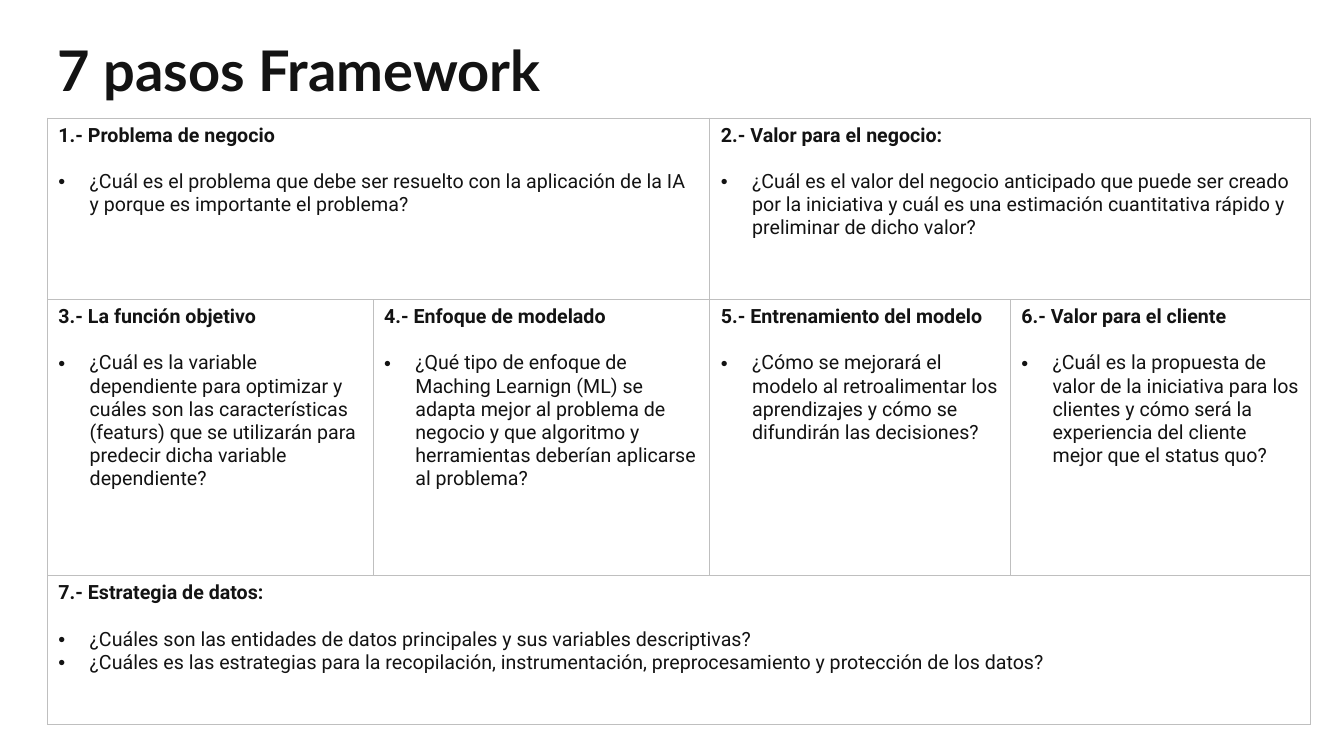
from dataclasses import dataclass

from lxml import etree
from pptx import Presentation, util as u
from pptx.dml.color import RGBColor
from pptx.enum import text
from pptx.oxml import ns


@dataclass(frozen=True)
class Theme:
    ink: str = "131313"
    paper: str = "FFFFFF"
    rule: str = "BFBFBF"
    head: str = "Lato"
    body: str = "Roboto"
    big: float = 40
    small: float = 14
    hair: float = 0.5
    gap: float = 16.5


# Each step: row, first column, column span, heading, questions
STEPS = [
    (0, 0, 2, "1.- Problema de negocio",
     ["¿Cuál es el problema que debe ser resuelto con la aplicación de la IA "
      "y porque es importante el problema?"]),
    (0, 2, 2, "2.- Valor para el negocio:",
     ["¿Cuál es el valor del negocio anticipado que puede ser creado por la "
      "iniciativa y cuál es una estimación cuantitativa rápido y preliminar "
      "de dicho valor?"]),
    (1, 0, 1, "3.- La función objetivo",
     ["¿Cuál es la variable dependiente para optimizar y cuáles son las "
      "características (featurs) que se utilizarán para predecir dicha "
      "variable dependiente?"]),
    (1, 1, 1, "4.- Enfoque de modelado",
     ["¿Qué tipo de enfoque de Maching Learnign (ML) se adapta mejor al "
      "problema de negocio y que algoritmo y herramientas deberían aplicarse "
      "al problema?"]),
    (1, 2, 1, "5.- Entrenamiento del modelo",
     ["¿Cómo se mejorará el modelo al retroalimentar los aprendizajes y cómo "
      "se difundirán las decisiones?"]),
    (1, 3, 1, "6.- Valor para el cliente",
     ["¿Cuál es la propuesta de valor de la iniciativa para los clientes y "
      "cómo será la experiencia del cliente mejor que el status quo?"]),
    (2, 0, 4, "7.- Estrategia de datos:",
     ["¿Cuáles son las entidades de datos principales y sus variables "
      "descriptivas?",
      "¿Cuáles es las estrategias para la recopilación, instrumentación, "
      "preprocesamiento y protección de los datos?"]),
]
COLS = [3.23, 3.34, 2.98, 2.98]
ROWS = [1.8, 2.74, 1.48]


def apply(item, **looks):
    for name, value in looks.items():
        setattr(item, name, value)


class Board:
    def __init__(self, slide, theme):
        self.slide, self.theme = slide, theme

    def phrase(self, para, words, face, size, bold):
        run = para.add_run()
        run.text = words
        apply(run.font, name=face, size=u.Pt(size), bold=bold)
        run.font.color.rgb = RGBColor.from_string(self.theme.ink)

    def title(self, words, box):
        frame = self.slide.shapes.add_textbox(*map(u.Inches, box)).text_frame
        apply(frame, word_wrap=True, vertical_anchor=text.MSO_ANCHOR.BOTTOM)
        para = frame.paragraphs[0]
        para.line_spacing = 0.9
        self.phrase(para, words, self.theme.head, self.theme.big, True)

    def bullet(self, para):
        props = para._p.get_or_add_pPr()
        inset = u.Inches(0.31)
        props.set("marL", str(inset))
        props.set("indent", str(-inset))
        etree.SubElement(props, ns.qn("a:buFont")).set("typeface", "Arial")
        etree.SubElement(props, ns.qn("a:buChar")).set("char", "•")

    def border(self, cell):
        props = cell._tc.get_or_add_tcPr()
        for side in ("lnL", "lnR", "lnT", "lnB"):
            line = etree.SubElement(props, ns.qn(f"a:{side}"))
            line.set("w", str(u.Pt(self.theme.hair)))
            fill = etree.SubElement(line, ns.qn("a:solidFill"))
            etree.SubElement(fill, ns.qn("a:srgbClr")).set("val", self.theme.rule)

    def grid(self, left, top, cols, rows):
        box = map(u.Inches, (left, top, sum(cols), sum(rows)))
        table = self.slide.shapes.add_table(len(rows), len(cols), *box).table
        apply(table, first_row=False, horz_banding=False)
        for col, width in zip(table.columns, cols):
            col.width = u.Inches(width)
        for row, height in zip(table.rows, rows):
            row.height = u.Inches(height)
        for cell in table.iter_cells():
            self.border(cell)
            cell.fill.solid()
            cell.fill.fore_color.rgb = RGBColor.from_string(self.theme.paper)
            apply(cell, margin_left=u.Inches(0.11), margin_right=u.Inches(0.11),
                  margin_top=u.Inches(0.06), margin_bottom=u.Inches(0.06))
        return table

    def step(self, table, row, col, span, head, asks):
        cell = table.cell(row, col)
        if span > 1:
            cell.merge(table.cell(row, col + span - 1))
        frame, look = cell.text_frame, self.theme
        para = frame.paragraphs[0]
        para.space_after = u.Pt(look.gap)
        self.phrase(para, head, look.body, look.small, True)
        for ask in asks:
            para = frame.add_paragraph()
            self.bullet(para)
            self.phrase(para, ask, look.body, look.small, False)


def main():
    deck = Presentation()
    apply(deck, slide_width=u.Inches(13.33), slide_height=u.Inches(7.5))
    board = Board(deck.slides.add_slide(deck.slide_layouts[6]), Theme())
    board.title("7 pasos Framework", (0.47, 0.31, 12.54, 0.77))
    table = board.grid(0.47, 1.17, COLS, ROWS)
    for step in STEPS:
        board.step(table, *step)
    deck.save("out.pptx")


if __name__ == "__main__":
    main()
